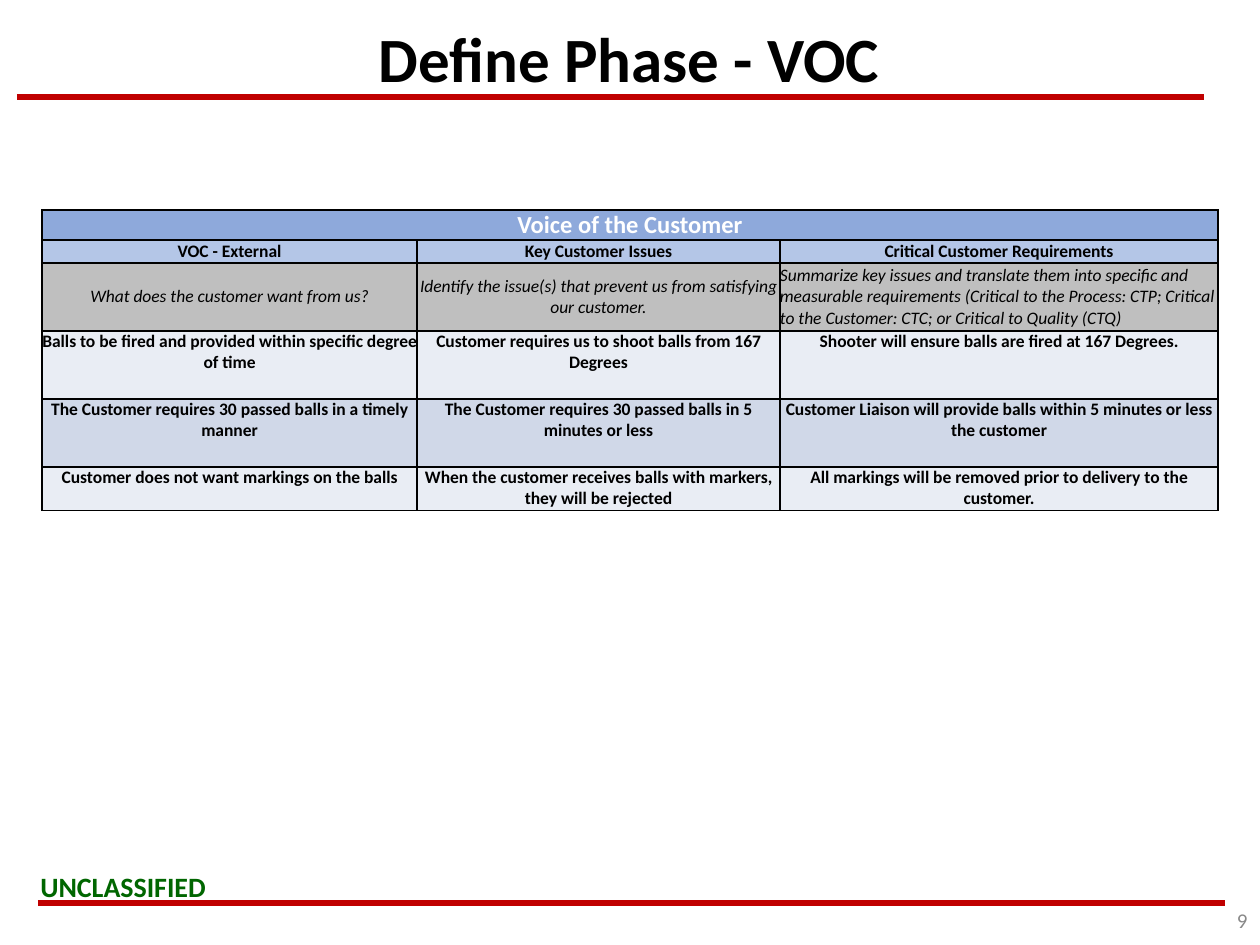
from dataclasses import dataclass

from lxml.etree import SubElement
from pptx import Presentation
from pptx.dml.color import RGBColor
from pptx.enum.shapes import MSO_CONNECTOR
from pptx.enum.text import MSO_ANCHOR, PP_ALIGN
from pptx.oxml import parse_xml
from pptx.oxml.ns import nsdecls, qn
from pptx.util import Emu, Pt

SCALE = 914400 / 126


@dataclass(frozen=True)
class Theme:
    """Colours and type sizes of the slide."""
    font: str = "Calibri"
    black: str = "000000"
    white: str = "FFFFFF"
    red: str = "C00000"
    green: str = "006600"
    gray: str = "898989"
    banner: str = "8EA9DB"
    header: str = "B4C6E7"
    guide: str = "BFBFBF"
    pale: str = "E9EDF4"
    band: str = "D0D8E8"
    title: int = 36
    mark: int = 16
    lead: int = 14
    small: int = 12
    body: int = 10


THEME = Theme()
COLS = [375, 363, 438]
ROWS = [30, 23, 68, 68, 68, 44]
FILLS = [THEME.banner, THEME.header, THEME.guide, THEME.pale, THEME.band, THEME.pale]
CELLS = [
    ["Voice of the Customer"],
    ["VOC - External", "Key Customer Issues", "Critical Customer Requirements"],
    ["What does the customer want from us?",
     "Identify the issue(s) that prevent us from satisfying our customer.",
     "Summarize key issues and translate them into specific and measurable requirements "
     "(Critical to the Process: CTP; Critical to the Customer: CTC; or Critical to Quality (CTQ)"],
    ["Balls to be fired and provided within specific degree of time",
     "Customer requires us to shoot balls from 167 Degrees",
     "Shooter will ensure balls are fired at 167 Degrees."],
    ["The Customer requires 30 passed balls in a timely manner",
     "The Customer requires 30 passed balls in 5 minutes or less",
     "Customer Liaison will provide balls within 5 minutes or less the customer"],
    ["Customer does not want markings on the balls",
     "When the customer receives balls with markers, they will be rejected",
     "All markings will be removed prior to delivery to the customer."],
]


def px(num):
    """Turn pixels into EMU."""
    return Emu(round(num * SCALE))


def style(frame, text, size, color, align=PP_ALIGN.CENTER, bold=True, italic=False):
    """Write one paragraph and format it."""
    frame.text = text
    para = frame.paragraphs[0]
    para.alignment = align
    for run in para.runs:
        font = run.font
        font.name, font.size = THEME.font, Pt(size)
        font.bold, font.italic = bold, italic
        font.color.rgb = RGBColor.from_string(color)


def add_text(slide, box, text, size, color, align, bold=True, wrap=True,
             anchor=MSO_ANCHOR.MIDDLE):
    """Add a text box."""
    frame = slide.shapes.add_textbox(*map(px, box)).text_frame
    frame.word_wrap = wrap
    frame.vertical_anchor = anchor
    style(frame, text, size, color, align, bold)


def add_rule(slide, left, right, top):
    """Add a level red line."""
    ends = map(px, (left, top, right, top))
    rule = slide.shapes.add_connector(MSO_CONNECTOR.STRAIGHT, *ends)
    rule.line.color.rgb = RGBColor.from_string(THEME.red)
    rule.line.width = Pt(3)
    SubElement(rule._element.spPr, qn("a:effectLst"))


def add_edges(cell):
    """Draw a thin black border on each side of a cell."""
    props = cell._tc.get_or_add_tcPr()
    for spot, side in enumerate("LRTB"):
        props.insert(spot, parse_xml(
            f'<a:ln{side} {nsdecls("a")} w="{Pt(1)}"><a:solidFill>'
            f'<a:srgbClr val="{THEME.black}"/></a:solidFill></a:ln{side}>'))


def fill_cell(cell, row, col):
    """Fill, border and label one table cell."""
    cell.fill.solid()
    cell.fill.fore_color.rgb = RGBColor.from_string(FILLS[row])
    add_edges(cell)
    cell.margin_left = cell.margin_right = cell.margin_top = cell.margin_bottom = 0
    cell.vertical_anchor = MSO_ANCHOR.MIDDLE if row < 3 else MSO_ANCHOR.TOP
    if col < len(CELLS[row]):
        lead, guide = row == 0, row == 2
        style(cell.text_frame, CELLS[row][col],
              THEME.lead if lead else THEME.body,
              THEME.white if lead else THEME.black,
              PP_ALIGN.LEFT if guide and col == 2 else PP_ALIGN.CENTER,
              bold=not guide, italic=guide)


def add_grid(slide, left, top):
    """Add the customer table."""
    size = map(px, (left, top, sum(COLS), sum(ROWS)))
    table = slide.shapes.add_table(len(ROWS), len(COLS), *size).table
    table.first_row = table.horz_banding = False
    for col, width in enumerate(COLS):
        table.columns[col].width = px(width)
    for row, height in enumerate(ROWS):
        table.rows[row].height = px(height)
        for col in range(len(COLS)):
            fill_cell(table.cell(row, col), row, col)
    table.cell(0, 0).merge(table.cell(0, len(COLS) - 1))


def main():
    """Build and save the slide."""
    deck = Presentation()
    deck.slide_width, deck.slide_height = px(1260), px(945)
    slide = deck.slides.add_slide(deck.slide_layouts[6])
    add_rule(slide, 17, 1204, 97)
    add_text(slide, (28, 863, 193, 47), "UNCLASSIFIED", THEME.mark, THEME.green,
             PP_ALIGN.LEFT, wrap=False, anchor=MSO_ANCHOR.TOP)
    add_rule(slide, 38, 1225, 903)
    add_text(slide, (171, -21, 916, 157), "Define Phase - VOC", THEME.title,
             THEME.black, PP_ALIGN.CENTER)
    add_text(slide, (966, 895, 294, 50), "9", THEME.small, THEME.gray,
             PP_ALIGN.RIGHT, bold=False)
    add_grid(slide, 42, 210)
    deck.save("out.pptx")


if __name__ == "__main__":
    main()
